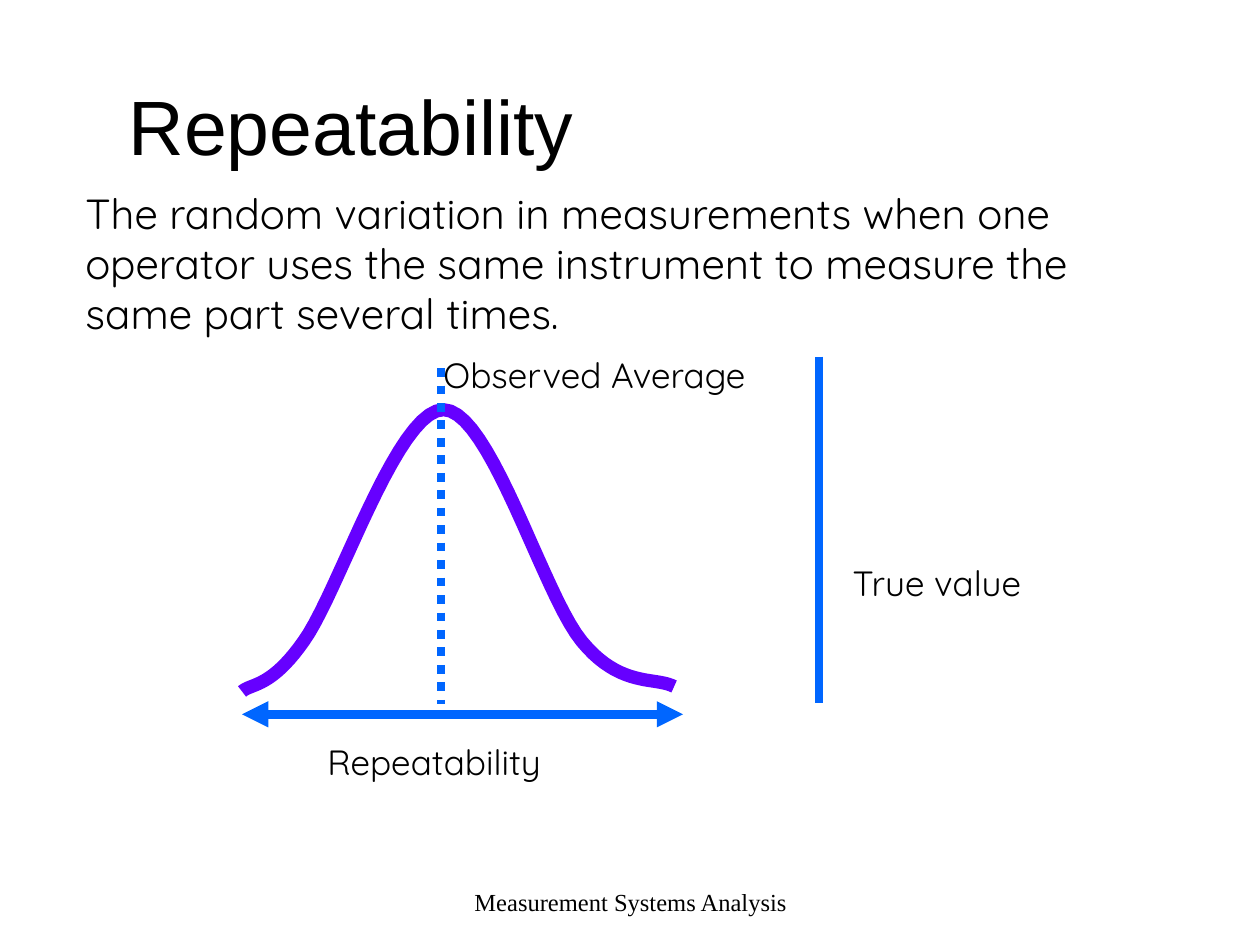
from lxml.etree import SubElement
from pptx import Presentation
from pptx.dml.color import RGBColor
from pptx.enum.dml import MSO_LINE
from pptx.enum.shapes import MSO_CONNECTOR
from pptx.enum.text import MSO_ANCHOR, MSO_AUTO_SIZE as FIT, PP_ALIGN
from pptx.oxml.ns import qn
from pptx.util import Cm, Pt

BLACK = RGBColor(0x00, 0x00, 0x00)
BLUE = RGBColor(0x00, 0x66, 0xFF)
PURPLE = RGBColor(0x66, 0x00, 0xFF)

BELL_START = (4.88, 13.94)
BELL_CURVES = [
    [(5.08, 13.77), (5.46, 13.87), (6.12, 12.93)],
    [(6.81, 11.99), (8.0, 8.26), (8.94, 8.26)],
    [(9.88, 8.26), (10.95, 11.99), (11.73, 12.93)],
    [(12.5, 13.87), (13.21, 13.64), (13.59, 13.84)],
]
LABELS = [
    ("True value", 16.94, 11.2, 4.11),
    ("Observed Average", 8.69, 6.99, 6.93),
    ("Repeatability", 6.35, 14.81, 5.03),
]


def bezier_points(start, curves, steps=20):
    for first, second, end in curves:
        for step in range(1, steps + 1):
            t = step / steps
            weights = ((1 - t) ** 3, 3 * t * (1 - t) ** 2, 3 * t * t * (1 - t), t ** 3)
            knots = (start, first, second, end)
            yield tuple(sum(w * knot[axis] for w, knot in zip(weights, knots)) for axis in (0, 1))
        start = end


class SlideWriter:
    font = "Quicksand"
    line_width = 5

    def __init__(self, page):
        self.shapes = page.shapes

    def text(self, words, left, top, width, height, size, font=None,
             wrap=True, fit=FIT.SHAPE_TO_FIT_TEXT, align=PP_ALIGN.LEFT):
        box = self.shapes.add_textbox(Cm(left), Cm(top), Cm(width), Cm(height))
        frame = box.text_frame
        frame_format = {"word_wrap": wrap, "auto_size": fit, "vertical_anchor": MSO_ANCHOR.MIDDLE}
        for name, value in frame_format.items():
            setattr(frame, name, value)
        para = frame.paragraphs[0]
        para.alignment = align
        span = para.add_run()
        span.text = words
        for name, value in {"name": font or self.font, "size": Pt(size)}.items():
            setattr(span.font, name, value)
        span.font.color.rgb = BLACK

    def line(self, start, end, dash=None, arrows=()):
        connector = self.shapes.add_connector(
            MSO_CONNECTOR.STRAIGHT, *(Cm(value) for value in start + end))
        connector.line.color.rgb = BLUE
        for name, value in {"width": Pt(self.line_width), "dash_style": dash}.items():
            setattr(connector.line, name, value)
        properties = connector._element.spPr
        for arrow in arrows:
            SubElement(properties.find(qn("a:ln")), qn(arrow), type="triangle")
        SubElement(properties, qn("a:effectLst"))

    def curve(self, start, curves, color, width):
        builder = self.shapes.build_freeform(Cm(start[0]), Cm(start[1]))
        points = [(Cm(x), Cm(y)) for x, y in bezier_points(start, curves)]
        builder.add_line_segments(points, close=False)
        shape = builder.convert_to_shape()
        shape.shadow.inherit = False
        shape.fill.background()
        shape.line.color.rgb = color
        shape.line.width = Pt(width)


def main():
    deck = Presentation()
    deck.slide_width, deck.slide_height = Cm(25.4), Cm(19.05)
    writer = SlideWriter(deck.slides.add_slide(deck.slide_layouts[6]))

    writer.text("Measurement Systems Analysis", 8.69, 17.55, 8.05, 1.27, 14,
                font="Times New Roman", wrap=False, fit=FIT.NONE, align=PP_ALIGN.CENTER)
    writer.text("Repeatability", 2.34, 0.97, 21.59, 3.07, 44, font="Arial", fit=FIT.NONE)
    writer.curve(BELL_START, BELL_CURVES, PURPLE, 7.5)
    writer.text("The random variation in measurements when one operator uses the same "
                "instrument to measure the same part several times.",
                1.47, 3.63, 21.34, 3.33, 24)
    writer.line((8.89, 7.42), (8.89, 14.2), dash=MSO_LINE.ROUND_DOT)
    writer.line((16.51, 7.19), (16.51, 14.17))
    writer.line((4.88, 14.4), (13.77, 14.4), arrows=("a:headEnd", "a:tailEnd"))
    for words, left, top, width in LABELS:
        writer.text(words, left, top, width, 1.1, 20, wrap=False)

    deck.save("out.pptx")


if __name__ == "__main__":
    main()
